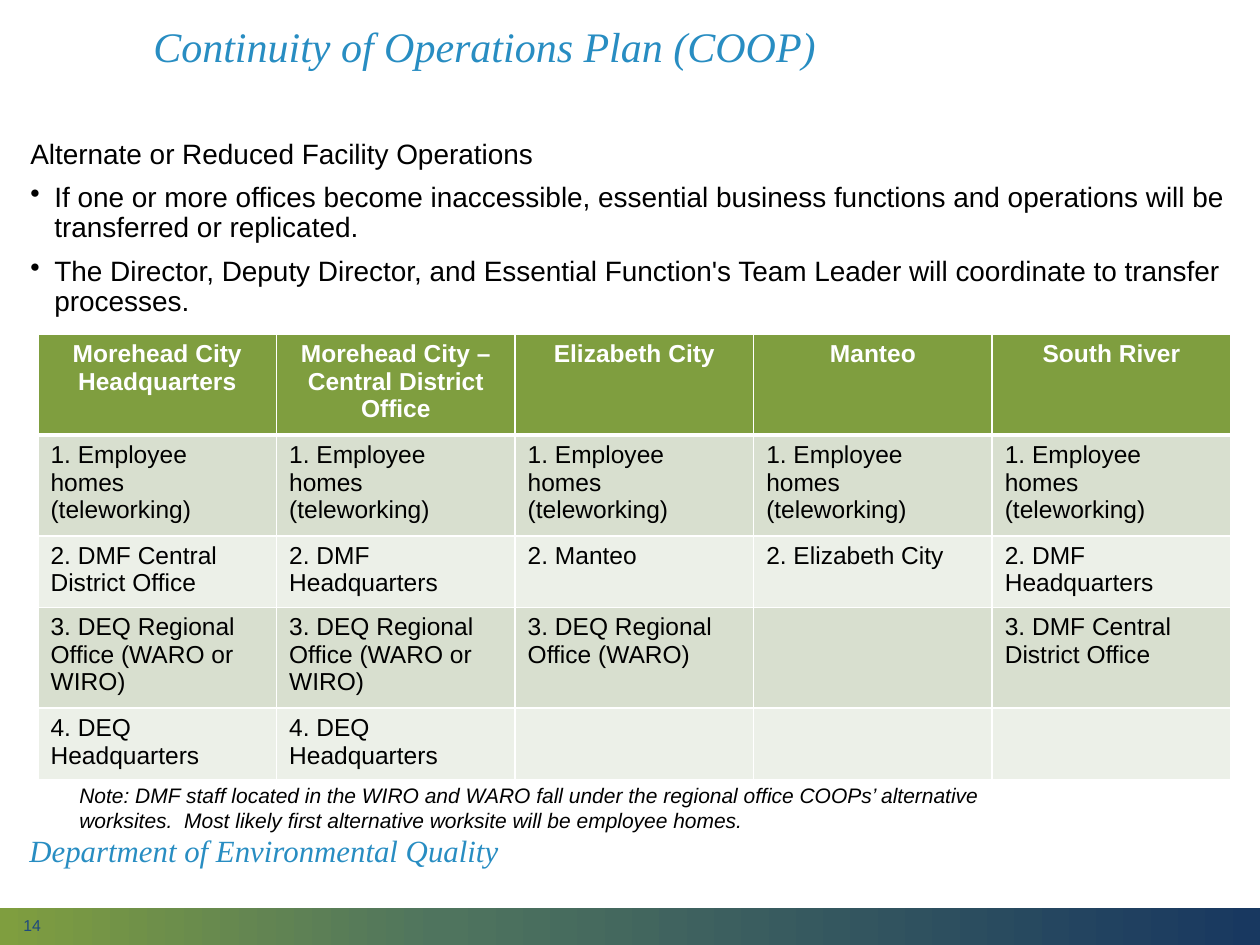
import pptx
import pptx.dml.color
import pptx.enum.shapes
import pptx.enum.text
import pptx.oxml
import pptx.oxml.ns
import pptx.util

RGB = pptx.dml.color.RGBColor
ALIGN = pptx.enum.text.PP_ALIGN
ANCHOR = pptx.enum.text.MSO_ANCHOR
SANS, SERIF = "Arial", "Times New Roman"
BLACK = RGB(0, 0, 0)
WHITE = RGB(255, 255, 255)
BLUE = RGB(0x28, 0x8D, 0xC2)
NAVY = RGB(0x1F, 0x49, 0x7D)
GREEN = RGB(0x7F, 0x9E, 0x3F)
TEAL = RGB(0x4F, 0x74, 0x5E)
DEEP = RGB(0x18, 0x38, 0x60)
SAGE = RGB(0xD8, 0xDF, 0xCF)
PALE = RGB(0xEC, 0xF0, 0xE8)

HOMES = "1. Employee homes (teleworking)"
HEADQ = "2. DMF Headquarters"
BOTH = "3. DEQ Regional Office (WARO or WIRO)"
LAST = "4. DEQ Headquarters"
ROWS = [
    ["Morehead City\nHeadquarters", "Morehead City – Central District Office",
     "Elizabeth City", "Manteo", "South River"],
    [HOMES] * 5,
    ["2. DMF Central District Office", HEADQ, "2. Manteo",
     "2. Elizabeth City", HEADQ],
    [BOTH, BOTH, "3. DEQ Regional Office (WARO)", "",
     "3. DMF Central District Office"],
    [LAST, LAST, "", "", ""],
]
BODY = [
    "Alternate or Reduced Facility Operations",
    "• If one or more offices become inaccessible, essential business "
    "functions and operations will be transferred or replicated.",
    "• The Director, Deputy Director, and Essential Function's Team Leader "
    "will coordinate to transfer processes.",
]
NOTE = ("Note: DMF staff located in the WIRO and WARO fall under the regional "
        "office COOPs’ alternative worksites.  Most likely first alternative "
        "worksite will be employee homes.")


def px(num):
    return pptx.util.Emu(round(num * 914400 / 126))


def node(xml):
    return pptx.oxml.parse_xml(xml.replace(
        " ", " " + pptx.oxml.ns.nsdecls("a") + " ", 1))


def bullet(para):
    props = para._p.get_or_add_pPr()
    props.set("marL", str(px(24)))
    props.set("indent", str(px(-24)))
    props.append(node('<a:buChar char="•"/>'))


def write(frame, text, size=14, font=SANS, color=BLACK, bold=False,
          ital=False, align=ALIGN.LEFT, line=None, gap=0):
    """Fill a frame, one paragraph a line; a leading "• " makes a bullet."""
    frame.word_wrap = True
    for i, part in enumerate(text.split("\n")):
        para = frame.paragraphs[0] if i == 0 else frame.add_paragraph()
        para.alignment = align
        if line:
            para.line_spacing = line
        if i and gap:
            para.space_before = pptx.util.Pt(gap)
        if part.startswith("• "):
            bullet(para)
        para.font.size = pptx.util.Pt(size)
        run = para.add_run()
        run.text = part.removeprefix("• ")
        face = run.font
        face.name, face.size = font, pptx.util.Pt(size)
        face.bold, face.italic = bold, ital
        face.color.rgb = color


def label(slide, box, text, anchor=ANCHOR.MIDDLE, **form):
    frame = slide.shapes.add_textbox(*map(px, box)).text_frame
    frame.vertical_anchor = anchor
    write(frame, text, **form)


def band(slide, box, stops):
    """Bar with a left-to-right gradient."""
    bar = slide.shapes.add_shape(
        pptx.enum.shapes.MSO_SHAPE.RECTANGLE, *map(px, box))
    bar.shadow.inherit = False
    bar.line.fill.background()
    marks = "".join(f'<a:gs pos="{pos * 1000}"><a:srgbClr val="{tint}"/></a:gs>'
                    for pos, tint in stops)
    fill = node(f'<a:gradFill rotWithShape="1"><a:gsLst>{marks}</a:gsLst>'
                '<a:lin ang="0" scaled="0"/></a:gradFill>')
    bar._element.spPr.find(pptx.oxml.ns.qn("a:prstGeom")).addnext(fill)


def border(cell, widths):
    """Draw white borders; widths are points for left, right, top, bottom."""
    props = cell._tc.get_or_add_tcPr()
    for i, (side, width) in enumerate(zip("LRTB", widths)):
        props.insert(i, node(
            f'<a:ln{side} w="{width * 12700}"><a:solidFill>'
            f'<a:srgbClr val="{WHITE}"/></a:solidFill></a:ln{side}>'))


def grid(slide, box, rows):
    table = slide.shapes.add_table(
        len(rows), len(rows[0]), *map(px, box)).table
    table.horz_banding = False
    for r, row in enumerate(rows):
        head = r == 0
        for c, text in enumerate(row):
            cell = table.cell(r, c)
            cell.fill.solid()
            cell.fill.fore_color.rgb = GREEN if head else SAGE if r % 2 else PALE
            # Heavy rule between the header and the first row
            border(cell, (1, 1, 3 if r == 1 else 1, 3 if head else 1))
            if text:
                write(cell.text_frame, text, bold=head,
                      color=WHITE if head else BLACK,
                      align=ALIGN.CENTER if head else ALIGN.LEFT)
            else:
                cell.text_frame.paragraphs[0].font.size = pptx.util.Pt(14)


def main():
    deck = pptx.Presentation()
    deck.slide_width, deck.slide_height = px(1260), px(945)
    slide = deck.slides.add_slide(deck.slide_layouts[6])

    # Footer band and page number
    band(slide, (0, 908, 1260, 37), [(0, GREEN), (35, TEAL), (100, DEEP)])
    label(slide, (11, 916, 284, 19), "14", size=9, color=NAVY)

    # Title and body
    label(slide, (141, 10, 742, 77), "Continuity of Operations Plan (COOP)",
          size=24, font=SERIF, color=BLUE, ital=True, line=0.9)
    label(slide, (18, 134, 1234, 655), "\n".join(BODY), anchor=ANCHOR.TOP,
          size=16, line=0.9, gap=7.5)

    # Department name
    label(slide, (17, 827, 517, 52), "Department of Environmental Quality",
          size=17.6, font=SERIF, color=BLUE, ital=True, line=0.9)

    # Alternate sites and note
    grid(slide, (38, 334, 1193, 260), ROWS)
    label(slide, (67, 776, 973, 63), NOTE, anchor=ANCHOR.TOP,
          size=12, ital=True)

    deck.save("out.pptx")


if __name__ == "__main__":
    main()
